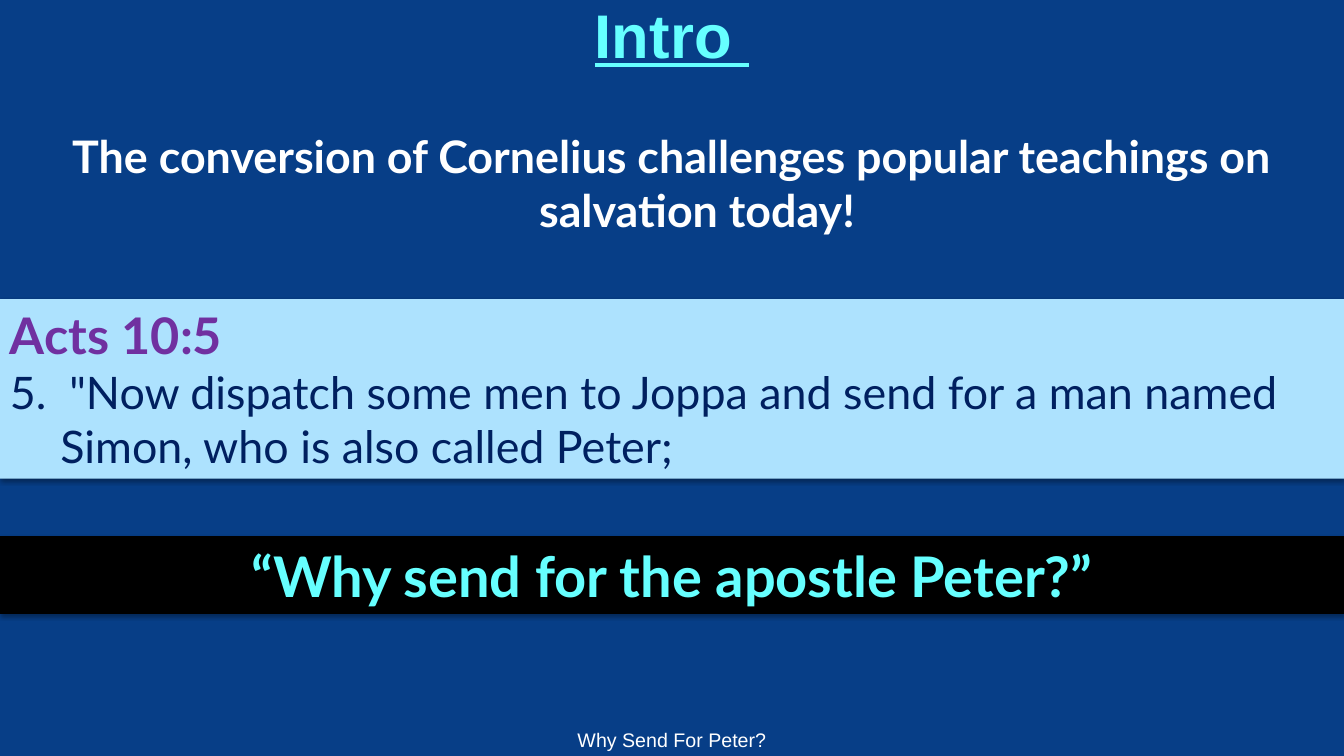
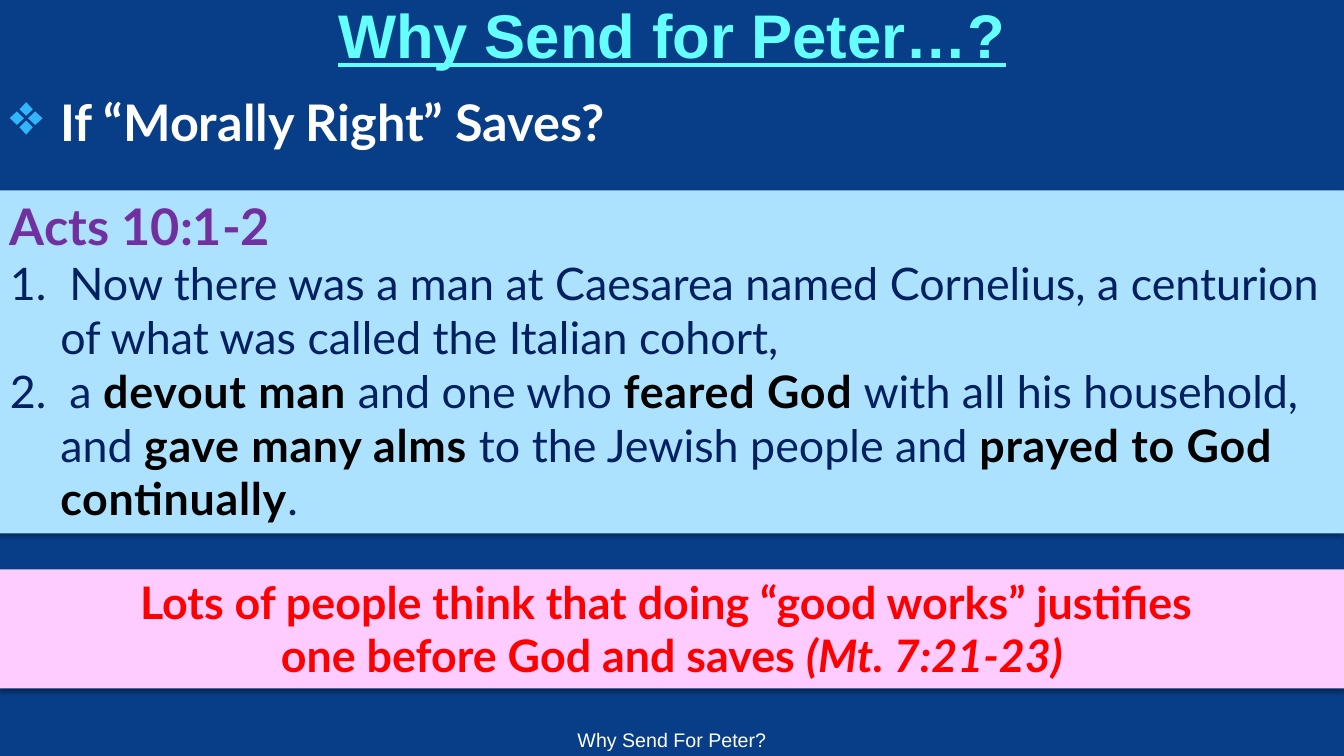
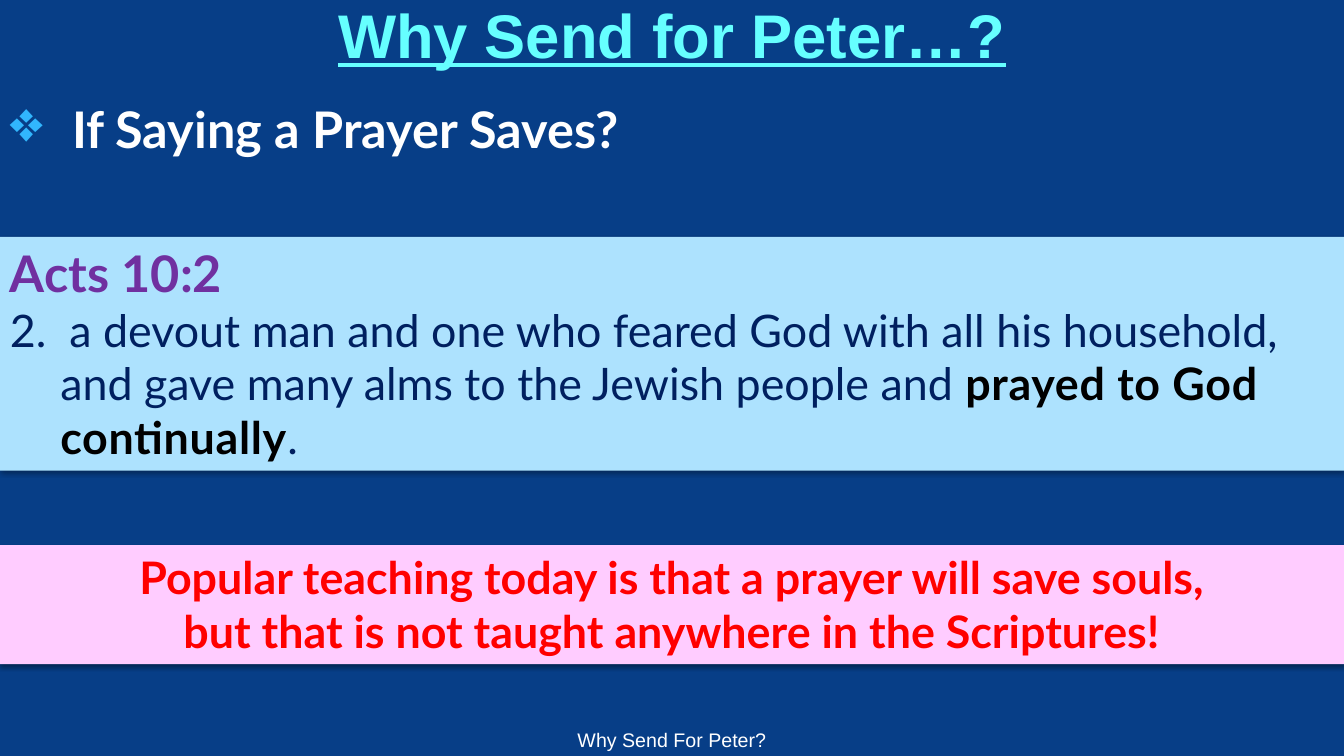
from dataclasses import dataclass
from typing import NamedTuple

from lxml.etree import SubElement
from pptx import Presentation
from pptx.dml.color import RGBColor
from pptx.enum.shapes import MSO_SHAPE
from pptx.enum.text import MSO_ANCHOR, MSO_AUTO_SIZE, PP_ALIGN
from pptx.oxml.ns import qn
from pptx.util import Cm, Pt

# Palette
NAVY = RGBColor(0x07, 0x3E, 0x87)
CYAN = RGBColor(0x66, 0xFF, 0xFF)
WHITE = RGBColor(0xFF, 0xFF, 0xFF)
BLACK = RGBColor(0x00, 0x00, 0x00)
SKY = RGBColor(0xAD, 0xE2, 0xFE)
PURPLE = RGBColor(0x70, 0x30, 0xA0)
INK = RGBColor(0x00, 0x20, 0x60)
PINK = RGBColor(0xFF, 0xCC, 0xFF)
RED = RGBColor(0xFF, 0x00, 0x00)
BULLET_BLUE = RGBColor(0x31, 0xB6, 0xFD)

# Shared layout
SLIDE_WIDTH, SLIDE_HEIGHT = Cm(33.87), Cm(19.05)
TITLE_HEIGHT = Cm(1.7)
FOOTER_TOP, FOOTER_WIDTH, FOOTER_HEIGHT = Cm(18.21), Cm(8.05), Cm(0.84)
FOOTER_TEXT = "Why Send For Peter?"
HANGING = Cm(1.27)
WIDE_HANGING = Cm(1.57)


@dataclass(frozen=True)
class Style:
    size: int
    color: RGBColor
    bold: bool = False
    underline: bool = False
    align: PP_ALIGN = PP_ALIGN.LEFT
    face: str = "Lato"
    bullet: str = ""


TITLE = Style(44, CYAN, bold=True, underline=True, align=PP_ALIGN.CENTER, face="Arial")
FOOTER = Style(14, WHITE, align=PP_ALIGN.CENTER, face="Arial")
LEAD = Style(32, WHITE, bold=True, align=PP_ALIGN.CENTER)
QUESTION = Style(40, CYAN, bold=True, align=PP_ALIGN.CENTER)
POINT = Style(36, WHITE, bold=True, bullet="❖")
REFERENCE = Style(36, PURPLE, bold=True)
VERSE = Style(32, INK)
REMARK = Style(32, RED, bold=True, align=PP_ALIGN.CENTER)


class Span(NamedTuple):
    text: str
    strong: bool = False
    italic: bool = False


class Line(NamedTuple):
    style: Style
    spans: list[Span]
    indent: int = HANGING


class Block(NamedTuple):
    top: int
    height: int
    lines: list[Line]
    fill: RGBColor | None = None


class Page(NamedTuple):
    title: str
    blocks: list[Block]


def line(style: Style, text: str, indent: int = HANGING) -> Line:
    return Line(style, [Span(text)], indent)


def strong(text: str) -> Span:
    return Span(text, strong=True)


PAGES = [
    Page("Intro ", [
        Block(Cm(3.12), Cm(3), [
            line(LEAD, "The conversion of Cornelius challenges popular teachings "
                       "on salvation today!"),
        ]),
        Block(Cm(13.51), Cm(1.96), [
            line(QUESTION, "“Why send for the apostle Peter?”"),
        ], BLACK),
        Block(Cm(7.54), Cm(4.52), [
            line(REFERENCE, "Acts 10:5"),
            line(VERSE, '5.  "Now dispatch some men to Joppa and send for a man '
                        "named Simon, who is also called Peter;"),
        ], SKY),
    ]),
    Page("Why Send for Peter…?", [
        Block(Cm(4.8), Cm(8.64), [
            line(REFERENCE, "Acts 10:1-2"),
            line(VERSE, "1.  Now there was a man at Caesarea named Cornelius, "
                        "a centurion of what was called the Italian cohort,"),
            Line(VERSE, [
                Span("2.  a "), strong("devout man"),
                Span(" and one who "), strong("feared God"),
                Span(" with all his household, and "), strong("gave many alms"),
                Span(" to the Jewish people and "),
                strong("prayed to God continually"), Span("."),
            ]),
        ], SKY),
        Block(Cm(14.35), Cm(3), [
            line(REMARK, "Lots of people think that doing “good works” justifies "),
            Line(REMARK, [Span("one before God and saves "),
                          Span("(Mt. 7:21-23)", italic=True)]),
        ], PINK),
        Block(Cm(2.16), Cm(1.8), [line(POINT, "If “Morally Right” Saves?")]),
    ]),
    Page("Why Send for Peter…?", [
        Block(Cm(2.34), Cm(1.8), [
            line(POINT, "If Saying a Prayer Saves?", WIDE_HANGING),
        ]),
        Block(Cm(5.97), Cm(5.89), [
            line(REFERENCE, "Acts 10:2"),
            Line(VERSE, [
                Span("2.  a devout man and one who feared God with all his household, "
                     "and gave many alms to the Jewish people and "),
                strong("prayed to God continually"), Span("."),
            ]),
        ], SKY),
        Block(Cm(13.74), Cm(3), [
            line(REMARK, "Popular teaching today is that a prayer will save souls,"),
            line(REMARK, "but that is not taught anywhere in the Scriptures!"),
        ], PINK),
    ]),
]


def write_line(paragraph, content: Line) -> None:
    """Fill one paragraph with its spans, indent, bullet and font."""
    style = content.style
    properties = paragraph._p.get_or_add_pPr()
    properties.set("marL", str(content.indent))
    properties.set("indent", str(-content.indent))
    if style.bullet:
        color = SubElement(properties, qn("a:buClr"))
        SubElement(color, qn("a:srgbClr"), val=str(BULLET_BLUE))
        SubElement(properties, qn("a:buSzPct"), val="115000")
        SubElement(properties, qn("a:buChar"), char=style.bullet)
    paragraph.alignment = style.align
    font = paragraph.font
    font.name, font.size = style.face, Pt(style.size)
    font.bold, font.underline = style.bold, style.underline
    font.color.rgb = style.color
    for span in content.spans:
        run = paragraph.add_run()
        run.text = span.text
        if span.strong:
            run.font.bold = True
            run.font.color.rgb = BLACK
            run.font._element.set("spc", "50")
        if span.italic:
            run.font.italic = True


def write_lines(frame, lines: list[Line]) -> None:
    frame.word_wrap = True
    for number, content in enumerate(lines):
        paragraph = frame.add_paragraph() if number else frame.paragraphs[0]
        write_line(paragraph, content)


def add_shadow(shape) -> None:
    """Give a band a soft shadow straight below it."""
    shape.shadow.inherit = False
    effects = shape._element.spPr.find(qn("a:effectLst"))
    shadow = SubElement(effects, qn("a:outerShdw"), blurRad=str(Pt(3.1)),
                        dist=str(Pt(1.8)), dir="5400000", rotWithShape="0")
    color = SubElement(shadow, qn("a:srgbClr"), val=str(BLACK))
    SubElement(color, qn("a:alpha"), val="35000")


def add_block(slide, block: Block) -> None:
    """Draw full-width text, on a coloured band if it has a fill."""
    place = (0, block.top, SLIDE_WIDTH, block.height)
    if block.fill is None:
        holder = slide.shapes.add_textbox(*place)
    else:
        holder = slide.shapes.add_shape(MSO_SHAPE.RECTANGLE, *place)
        holder.fill.solid()
        holder.fill.fore_color.rgb = block.fill
        holder.line.fill.background()
        add_shadow(holder)
    frame = holder.text_frame
    frame.vertical_anchor = MSO_ANCHOR.TOP
    write_lines(frame, block.lines)
    frame.auto_size = MSO_AUTO_SIZE.SHAPE_TO_FIT_TEXT


def add_title(slide, text: str) -> None:
    title = slide.shapes.title
    title.left, title.top = 0, 0
    title.width, title.height = SLIDE_WIDTH, TITLE_HEIGHT
    title.text_frame.auto_size = MSO_AUTO_SIZE.NONE
    title.text_frame.vertical_anchor = MSO_ANCHOR.MIDDLE
    write_lines(title.text_frame, [line(TITLE, text, indent=0)])


def add_footer(slide) -> None:
    left = (SLIDE_WIDTH - FOOTER_WIDTH) // 2
    footer = slide.shapes.add_textbox(left, FOOTER_TOP, FOOTER_WIDTH, FOOTER_HEIGHT)
    write_lines(footer.text_frame, [line(FOOTER, FOOTER_TEXT, indent=0)])


def main() -> None:
    deck = Presentation()
    deck.slide_width, deck.slide_height = SLIDE_WIDTH, SLIDE_HEIGHT
    backdrop = deck.slide_master.background.fill
    backdrop.solid()
    backdrop.fore_color.rgb = NAVY
    title_only = deck.slide_layouts[5]
    for page in PAGES:
        slide = deck.slides.add_slide(title_only)
        add_title(slide, page.title)
        add_footer(slide)
        for block in page.blocks:
            add_block(slide, block)
    deck.save("out.pptx")


if __name__ == "__main__":
    main()
